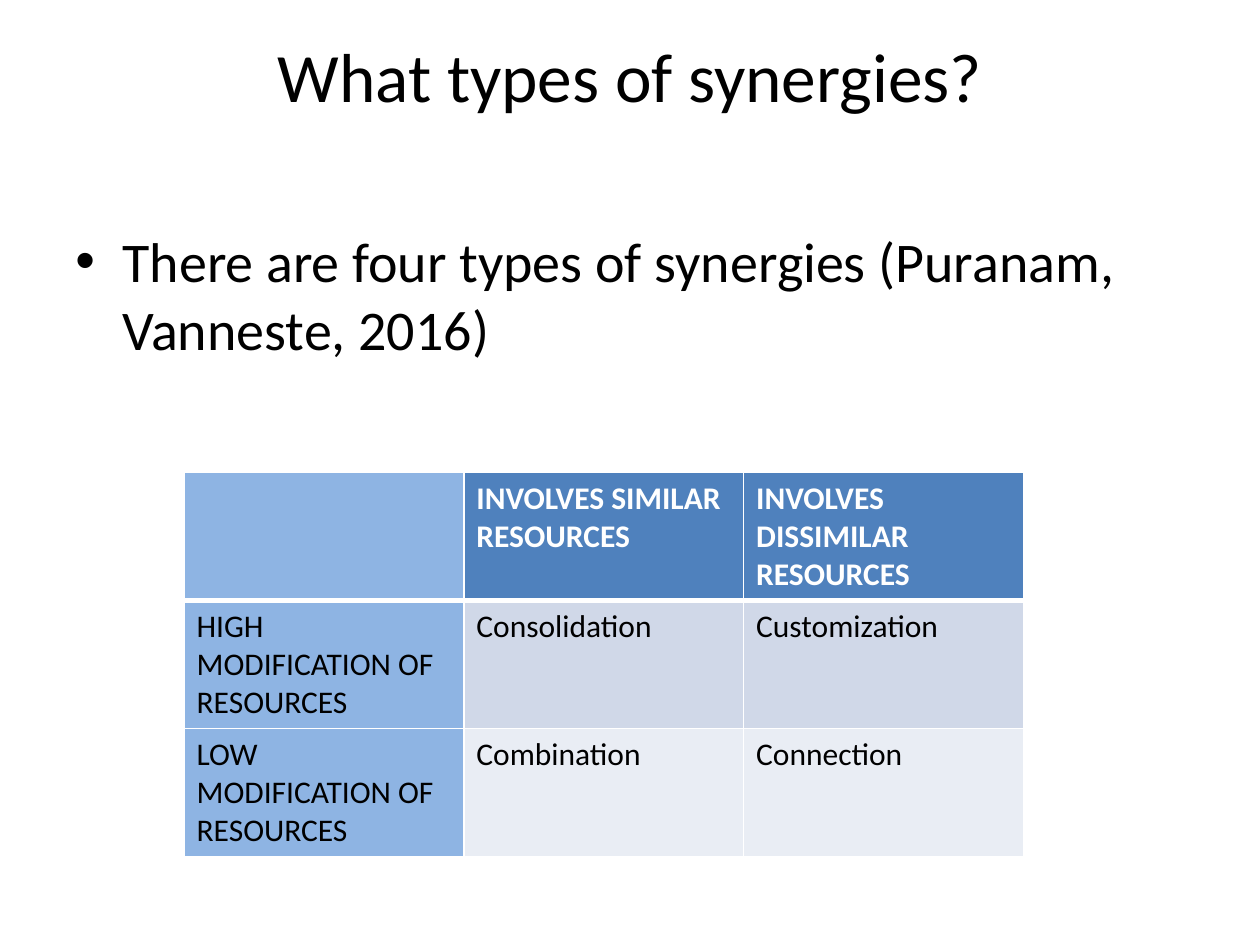
from lxml import etree
from pptx import Presentation
from pptx.dml.color import RGBColor
from pptx.enum.text import MSO_ANCHOR, PP_ALIGN
from pptx.oxml.ns import qn
from pptx.util import Cm, Pt

MIDDLE = MSO_ANCHOR.MIDDLE
CENTER = PP_ALIGN.CENTER
FONT = "Calibri"
BLACK, WHITE = "000000", "FFFFFF"
SIDE, HEAD = "8EB4E3", "4F81BD"
ROWS = [
    ("", "INVOLVES SIMILAR RESOURCES", "INVOLVES DISSIMILAR RESOURCES"),
    ("HIGH MODIFICATION OF RESOURCES", "Consolidation", "Customization"),
    ("LOW MODIFICATION OF RESOURCES", "Combination", "Connection"),
]
BANDS = [HEAD, "D0D8E8", "E9EDF4"]


def color(code):
    """Turn a hex string into a colour."""
    return RGBColor.from_string(code)


def style(para, size, code=BLACK, bold=False):
    """Set the font of a paragraph."""
    font = para.font
    font.name, font.size, font.bold = FONT, Pt(size), bold
    font.color.rgb = color(code)


def add_text(slide, text, top, height):
    """Add a wrapped text box and return its frame."""
    box = slide.shapes.add_textbox(Cm(1.27), Cm(top), Cm(22.86), Cm(height))
    frame = box.text_frame
    frame.word_wrap = True
    frame.text = text
    return frame


def add_title(slide, text):
    """Add the centred title, raised by a deep bottom margin."""
    frame = add_text(slide, text, 0.76, 3.18)
    frame.vertical_anchor = MIDDLE
    frame.margin_bottom = Cm(1.8)
    para = frame.paragraphs[0]
    para.alignment = CENTER
    style(para, 39.6)


def add_bullet(slide, text):
    """Add the body text with a hanging bullet."""
    para = add_text(slide, text, 4.45, 12.57).paragraphs[0]
    props = para._p.get_or_add_pPr()
    props.set("marL", str(Cm(0.95)))
    props.set("indent", str(Cm(-0.95)))
    etree.SubElement(props, qn("a:buFont"), typeface="Arial")
    etree.SubElement(props, qn("a:buChar"), char="•")
    style(para, 32)


def add_border(cell, side, width):
    """Draw one white border of a cell."""
    props = cell._tc.get_or_add_tcPr()
    line = etree.SubElement(props, qn(f"a:ln{side}"), w=str(Pt(width)))
    fill = etree.SubElement(line, qn("a:solidFill"))
    etree.SubElement(fill, qn("a:srgbClr"), val=WHITE)


def fill_cell(cell, text, row, col):
    """Set the text, borders and fill of a cell."""
    thick = {(0, "B"), (1, "T")}
    for side in "LRTB":
        add_border(cell, side, 3 if (row, side) in thick else 1)
    cell.fill.solid()
    cell.fill.fore_color.rgb = color(BANDS[row] if col else SIDE)
    cell.text = text
    head = row == 0
    style(cell.text_frame.paragraphs[0], 18, WHITE if head else BLACK, head)


def add_grid(slide):
    """Add the table of synergy types."""
    wide, high = Cm(5.64), Cm(2.58)
    count = len(ROWS)
    table = slide.shapes.add_table(
        count, count, Cm(3.71), Cm(9.53), wide * count, high * count
    ).table
    for col in table.columns:
        col.width = wide
    for r, texts in enumerate(ROWS):
        table.rows[r].height = high
        for c, text in enumerate(texts):
            fill_cell(table.cell(r, c), text, r, c)


def main():
    """Build and save the slide."""
    deck = Presentation()
    deck.slide_width, deck.slide_height = Cm(25.4), Cm(19.05)
    slide = deck.slides.add_slide(deck.slide_layouts[6])
    add_title(slide, "What types of synergies?")
    add_bullet(slide, "There are four types of synergies (Puranam, Vanneste, 2016)")
    add_grid(slide)
    deck.save("out.pptx")


if __name__ == "__main__":
    main()
